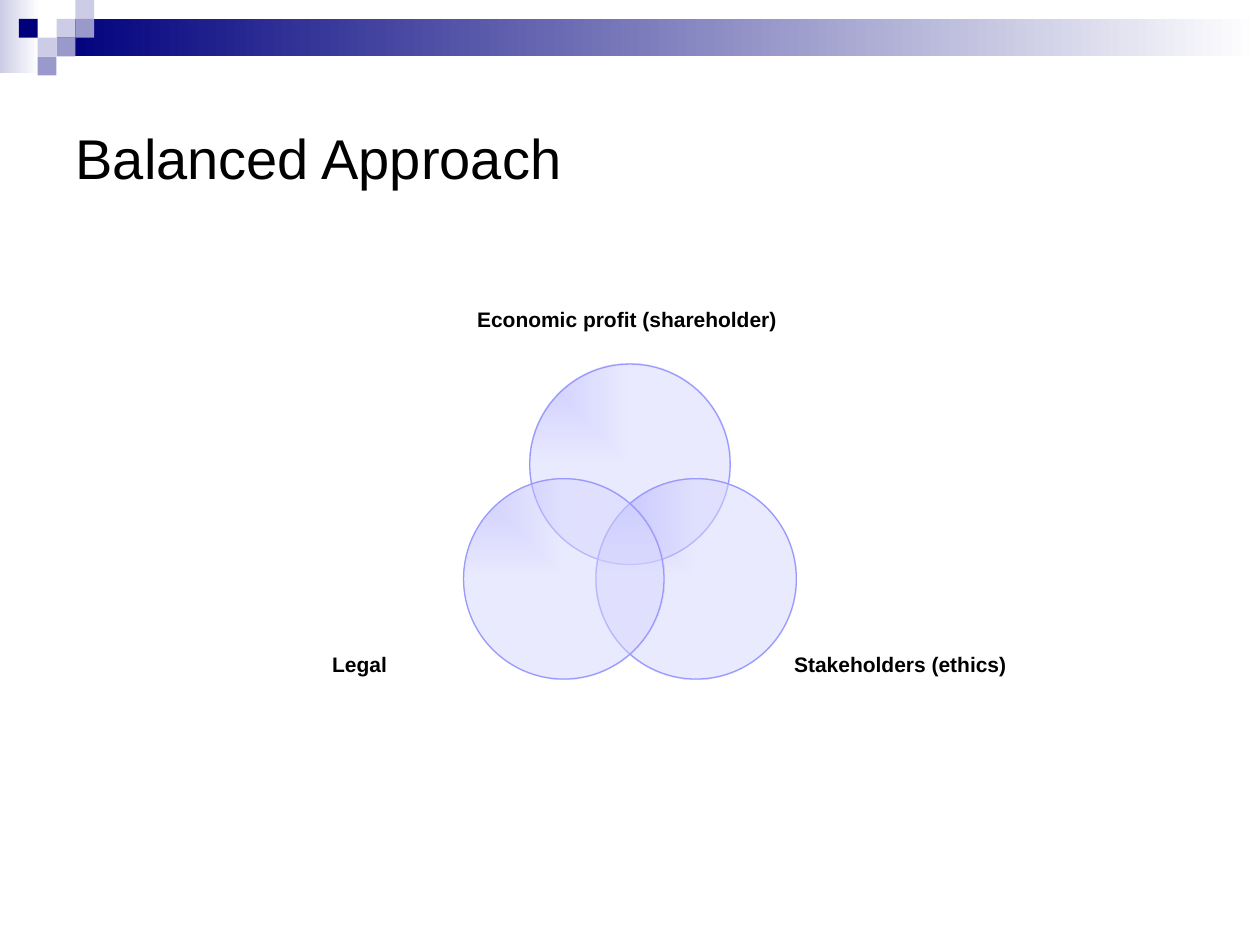
"""Build the Balanced Approach slide with its three-circle Venn diagram."""
import dataclasses
import math

import pptx
import pptx.dml.color
import pptx.enum.shapes
import pptx.enum.text
import pptx.oxml
import pptx.oxml.ns
import pptx.util

Cm = pptx.util.Cm
Pt = pptx.util.Pt
Kind = pptx.enum.shapes.MSO_SHAPE
Align = pptx.enum.text.PP_ALIGN
Anchor = pptx.enum.text.MSO_ANCHOR
qn = pptx.oxml.ns.qn

NAVY, MID, PALE, WHITE, BLACK = "00007D", "9999CC", "CCCCE6", "FFFFFF", "000000"
LILAC, MIST = "9999FF", "D7D7FF"
TILE = 0.38
MID_X, MID_Y = 12.7, 10.9
RING, RADIUS = 1.54, 2.02
WIDE, HIGH = 4.04, 1.02


@dataclasses.dataclass
class Bar:
    left: float
    top: float
    width: float
    height: float
    start: str


@dataclasses.dataclass
class Tile:
    col: int
    row: int
    fill: str


@dataclasses.dataclass
class Topic:
    text: str
    angle: float
    left: float
    top: float


BARS = [Bar(0, 0, 0.79, 1.47, PALE), Bar(1.14, 0.38, 24.26, 0.76, NAVY)]
TILES = [
    Tile(2, 1, PALE), Tile(3, 0, PALE), Tile(3, 1, MID), Tile(1, 2, PALE),
    Tile(0, 1, NAVY), Tile(2, 2, MID), Tile(1, 3, MID),
]
TOPICS = [
    Topic("Economic profit (shareholder) ", -90, 10.68, 5.92),
    Topic("Stakeholders (ethics)", 30, 16.13, 12.88),
    Topic("Legal", 150, 5.23, 12.88),
]


def tint(code: str) -> pptx.dml.color.RGBColor:
    """Turn a hex string into a colour."""
    return pptx.dml.color.RGBColor.from_string(code)


def add(slide, kind, left: float, top: float, width: float, height: float):
    """Add a preset shape with no shadow and no line."""
    shape = slide.shapes.add_shape(kind, Cm(left), Cm(top), Cm(width), Cm(height))
    shape.shadow.inherit = False
    shape.line.fill.background()
    return shape


def blend(shape, start: str, end: str) -> None:
    """Fill a shape with a gradient from left to right."""
    shape.fill.gradient()
    shape.fill.gradient_angle = 0
    for stop, code in zip(shape.fill.gradient_stops, (start, end)):
        stop.color.rgb = tint(code)


def soften(shape) -> None:
    """Make a gradient half clear and spread it from the top left corner."""
    grad = shape._element.spPr.find(qn("a:gradFill"))
    for color in grad.iter(qn("a:srgbClr")):
        color.append(pptx.oxml.parse_xml(
            f'<a:alpha {pptx.oxml.ns.nsdecls("a")} val="50000"/>'))
    grad.replace(grad.find(qn("a:lin")), pptx.oxml.parse_xml(
        f'<a:path {pptx.oxml.ns.nsdecls("a")} path="rect">'
        '<a:fillToRect r="100000" b="100000"/></a:path>'))


def style(para, size: int, align, bold: bool = False) -> None:
    """Set the font and alignment of a paragraph."""
    para.alignment = align
    para.font.name = "Arial"
    para.font.size = Pt(size)
    para.font.bold = bold
    para.font.color.rgb = tint(BLACK)


def draw_bar(slide, bar: Bar) -> None:
    """Draw a bar that fades to white."""
    shape = add(slide, Kind.RECTANGLE, bar.left, bar.top, bar.width, bar.height)
    blend(shape, bar.start, WHITE)


def draw_tile(slide, tile: Tile) -> None:
    """Draw one square of the corner pattern."""
    shape = add(slide, Kind.RECTANGLE, TILE * (tile.col + 1), TILE * tile.row, TILE, TILE)
    shape.fill.solid()
    shape.fill.fore_color.rgb = tint(tile.fill)


def draw_topic(slide, topic: Topic) -> None:
    """Draw one circle of the diagram and its label."""
    turn = math.radians(topic.angle)
    left = MID_X + RING * math.cos(turn) - RADIUS
    top = MID_Y + RING * math.sin(turn) - RADIUS
    disc = add(slide, Kind.OVAL, left, top, 2 * RADIUS, 2 * RADIUS)
    blend(disc, LILAC, MIST)
    soften(disc)
    disc.line.color.rgb = tint(LILAC)
    disc.line.width = Pt(0.75)

    label = add(slide, Kind.RECTANGLE, topic.left, topic.top, WIDE, HIGH)
    label.fill.background()
    frame = label.text_frame
    frame.margin_left = frame.margin_right = frame.margin_top = frame.margin_bottom = 0
    frame.word_wrap = False
    frame.vertical_anchor = Anchor.MIDDLE
    frame.text = topic.text
    style(frame.paragraphs[0], 12, Align.CENTER, True)


def draw_title(slide, text: str) -> None:
    """Place and format the title."""
    title = slide.shapes.title
    title.left, title.top, title.width, title.height = Cm(1.27), Cm(1.27), Cm(22.86), Cm(3.81)
    title.text_frame.text = text
    title.text_frame.vertical_anchor = Anchor.MIDDLE
    style(title.text_frame.paragraphs[0], 32, Align.LEFT)


def main() -> None:
    """Build and save the deck."""
    deck = pptx.Presentation()
    deck.slide_width, deck.slide_height = Cm(25.4), Cm(19.05)
    slide = deck.slides.add_slide(deck.slide_layouts[5])
    for bar in BARS:
        draw_bar(slide, bar)
    for tile in TILES:
        draw_tile(slide, tile)
    draw_title(slide, "Balanced Approach")
    for topic in TOPICS:
        draw_topic(slide, topic)
    deck.save("out.pptx")


if __name__ == "__main__":
    main()
